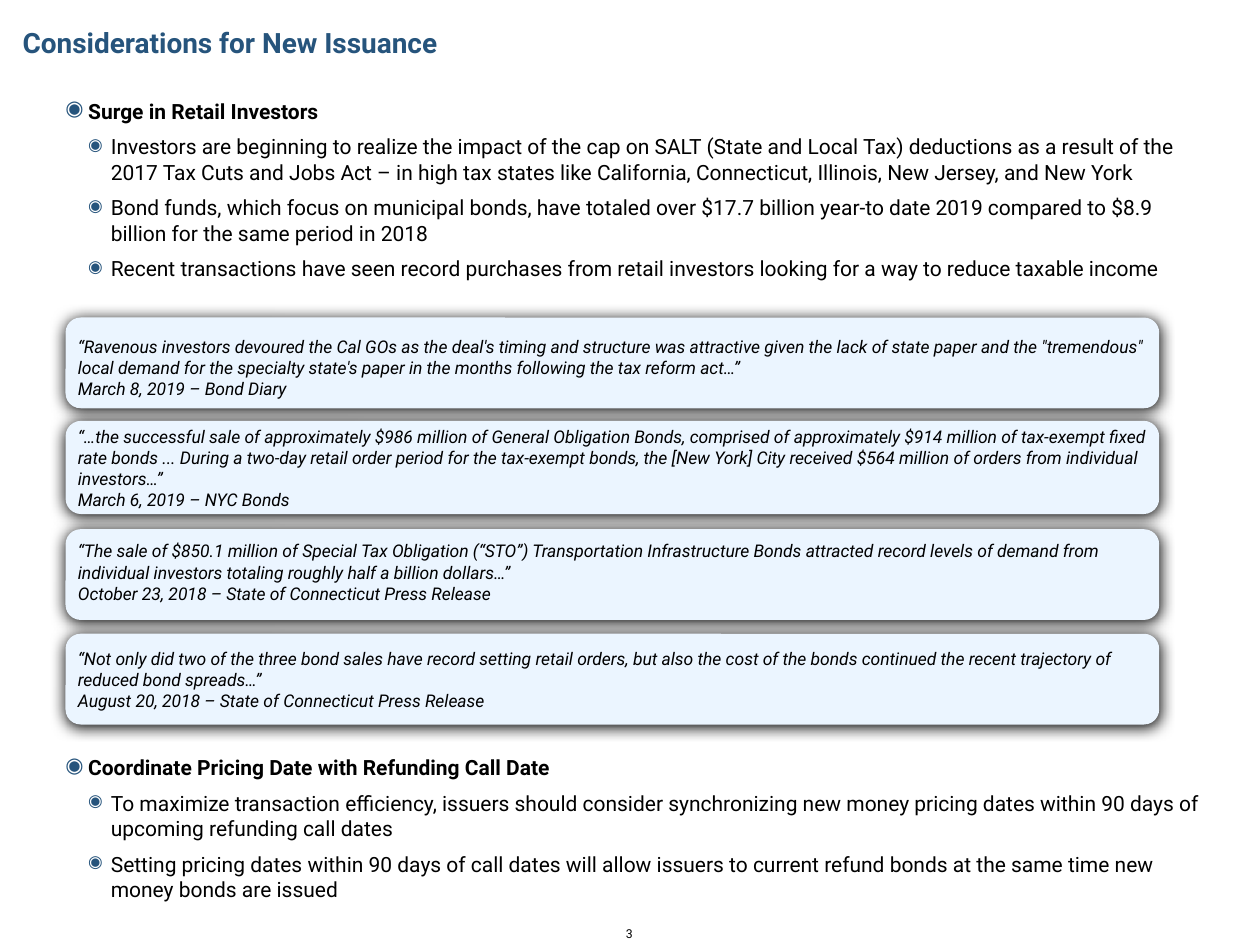
import lxml.etree
import pptx
import pptx.dml.color
import pptx.enum.shapes
import pptx.enum.text
import pptx.oxml
import pptx.oxml.ns
import pptx.util

Inches = pptx.util.Inches
Pt = pptx.util.Pt
qn = pptx.oxml.ns.qn

FONT = "Roboto"
NAVY = "26547C"
BLACK = "000000"
PALE_BLUE = "EBF5FF"
MARGIN = 0.52
CARD_WIDTH = 8.68

RETAIL = ("Surge in Retail Investors", [
    "Investors are beginning to realize the impact of the cap on SALT (State and Local Tax) deductions as a result of the 2017 Tax Cuts and Jobs Act – in high tax states like California, Connecticut, Illinois, New Jersey, and New York",
    "Bond funds, which focus on municipal bonds, have totaled over $17.7 billion year-to date 2019 compared to $8.9 billion for the same period in 2018",
    "Recent transactions have seen record purchases from retail investors looking for a way to reduce taxable income",
])
PRICING = ("Coordinate Pricing Date with Refunding Call Date", [
    "To maximize transaction efficiency, issuers should consider synchronizing new money pricing dates within 90 days of upcoming refunding call dates",
    "Setting pricing dates within 90 days of call dates will allow issuers to current refund bonds at the same time new money bonds are issued",
])

# top, height, text offset, text height, quote, attribution
QUOTES = [
    (2.52, 0.72, 0.1, 0.72,
     "“Ravenous investors devoured the Cal GOs as the deal's timing and structure was attractive given the lack of state paper and the \"tremendous\" local demand for the specialty state's paper in the months following the tax reform act…”",
     "March 8, 2019 – Bond Diary"),
    (3.34, 0.74, -0.01, 0.77,
     "“…the successful sale of approximately $986 million of General Obligation Bonds, comprised of approximately $914 million of tax-exempt fixed rate bonds ... During a two-day retail order period for the tax-exempt bonds, the [New York] City received $564 million of orders from individual investors…”",
     "March 6, 2019 – NYC Bonds"),
    (4.2, 0.72, 0.04, 0.72,
     "“The sale of $850.1 million of Special Tax Obligation (“STO”) Transportation Infrastructure Bonds attracted record levels of demand from individual investors totaling roughly half a billion dollars…”",
     "October 23, 2018 – State of Connecticut Press Release"),
    (5.03, 0.72, 0.06, 0.61,
     "“Not only did two of the three bond sales have record setting retail orders, but also the cost of the bonds continued the recent trajectory of reduced bond spreads…”",
     "August 20, 2018 – State of Connecticut Press Release"),
]


def rgb(value):
    return pptx.dml.color.RGBColor.from_string(value)


def write(paragraph, text, size, color=BLACK, bold=False, italic=False):
    paragraph.text = text
    for run in paragraph.runs:
        run.font.name = FONT
        run.font.size = Pt(size)
        run.font.bold = bold
        run.font.italic = italic
        run.font.color.rgb = rgb(color)


def set_insets(frame, side, edge):
    frame.margin_left = frame.margin_right = Inches(side)
    frame.margin_top = frame.margin_bottom = Inches(edge)


def add_textbox(slide, left, top, width, height, side=0, edge=0, wrap=True):
    box = slide.shapes.add_textbox(Inches(left), Inches(top), Inches(width), Inches(height))
    box.text_frame.word_wrap = wrap
    set_insets(box.text_frame, side, edge)
    return box.text_frame


def add_bullet(paragraph, level):
    paragraph.level = level
    paragraph.space_before = Pt(6)
    properties = paragraph._p.get_or_add_pPr()
    properties.set("marL", str(Inches(0.18 * (level + 1))))
    properties.set("indent", str(Inches(-0.18)))
    color = lxml.etree.SubElement(properties, qn("a:buClr"))
    lxml.etree.SubElement(color, qn("a:srgbClr"), val=NAVY)
    if level:
        lxml.etree.SubElement(properties, qn("a:buSzPct"), val="80000")
    lxml.etree.SubElement(properties, qn("a:buChar"), char="◉")


def add_shadow(card):
    card.shadow.inherit = False
    effects = card._element.spPr.find(qn("a:effectLst"))
    shadow = lxml.etree.SubElement(
        effects, qn("a:outerShdw"), blurRad=str(Pt(8.5)), dist=str(Pt(1)),
        dir="5400000", algn="t", rotWithShape="0")
    lxml.etree.SubElement(shadow, qn("a:srgbClr"), val=BLACK)


def add_title(slide, left, top, width, height):
    title = slide.shapes.title
    title.left, title.top = Inches(left), Inches(top)
    title.width, title.height = Inches(width), Inches(height)
    frame = title.text_frame
    set_insets(frame, 0.08, 0)
    frame.vertical_anchor = pptx.enum.text.MSO_ANCHOR.TOP
    frame.auto_size = pptx.enum.text.MSO_AUTO_SIZE.SHAPE_TO_FIT_TEXT
    write(frame.paragraphs[0], "Considerations for New Issuance", 16, NAVY, bold=True)
    frame.paragraphs[0].alignment = pptx.enum.text.PP_ALIGN.LEFT


def add_topic(slide, left, top, width, height, heading, points):
    frame = add_textbox(slide, left, top, width, height)
    write(frame.paragraphs[0], heading, 12, bold=True)
    add_bullet(frame.paragraphs[0], 0)
    for point in points:
        paragraph = frame.add_paragraph()
        write(paragraph, point, 12)
        add_bullet(paragraph, 1)


def add_quote(slide, left, top, width, height, text_offset, text_height, quote, attribution):
    card = slide.shapes.add_shape(
        pptx.enum.shapes.MSO_SHAPE.ROUNDED_RECTANGLE,
        Inches(left), Inches(top), Inches(width), Inches(height))
    card.fill.solid()
    card.fill.fore_color.rgb = rgb(PALE_BLUE)
    card.line.fill.background()
    add_shadow(card)
    frame = add_textbox(slide, left, top + text_offset, width, text_height, 0.1, 0.05)
    frame.auto_size = pptx.enum.text.MSO_AUTO_SIZE.SHAPE_TO_FIT_TEXT
    write(frame.paragraphs[0], quote, 10, italic=True)
    write(frame.add_paragraph(), attribution, 10, italic=True)


def add_page_number(slide, left, top, width, height):
    frame = add_textbox(slide, left, top, width, height, wrap=False)
    frame.vertical_anchor = pptx.enum.text.MSO_ANCHOR.MIDDLE
    write(frame.paragraphs[0], "3", 7)
    frame.paragraphs[0].alignment = pptx.enum.text.PP_ALIGN.CENTER


def main():
    deck = pptx.Presentation()
    deck.slide_width, deck.slide_height = Inches(10), Inches(7.5)
    slide = deck.slides.add_slide(deck.slide_layouts.get_by_name("Title Only"))
    add_title(slide, 0.1, 0.2, 9.9, 0.27)
    add_topic(slide, MARGIN, 0.78, 9.1, 1.31, *RETAIL)
    for top, height, *content in QUOTES:
        add_quote(slide, MARGIN, top, CARD_WIDTH, height, *content)
    add_topic(slide, MARGIN, 5.99, 9.1, 0.52, *PRICING)
    add_page_number(slide, 4.93, 7.35, 0.13, 0.12)
    deck.save("out.pptx")


if __name__ == "__main__":
    main()
